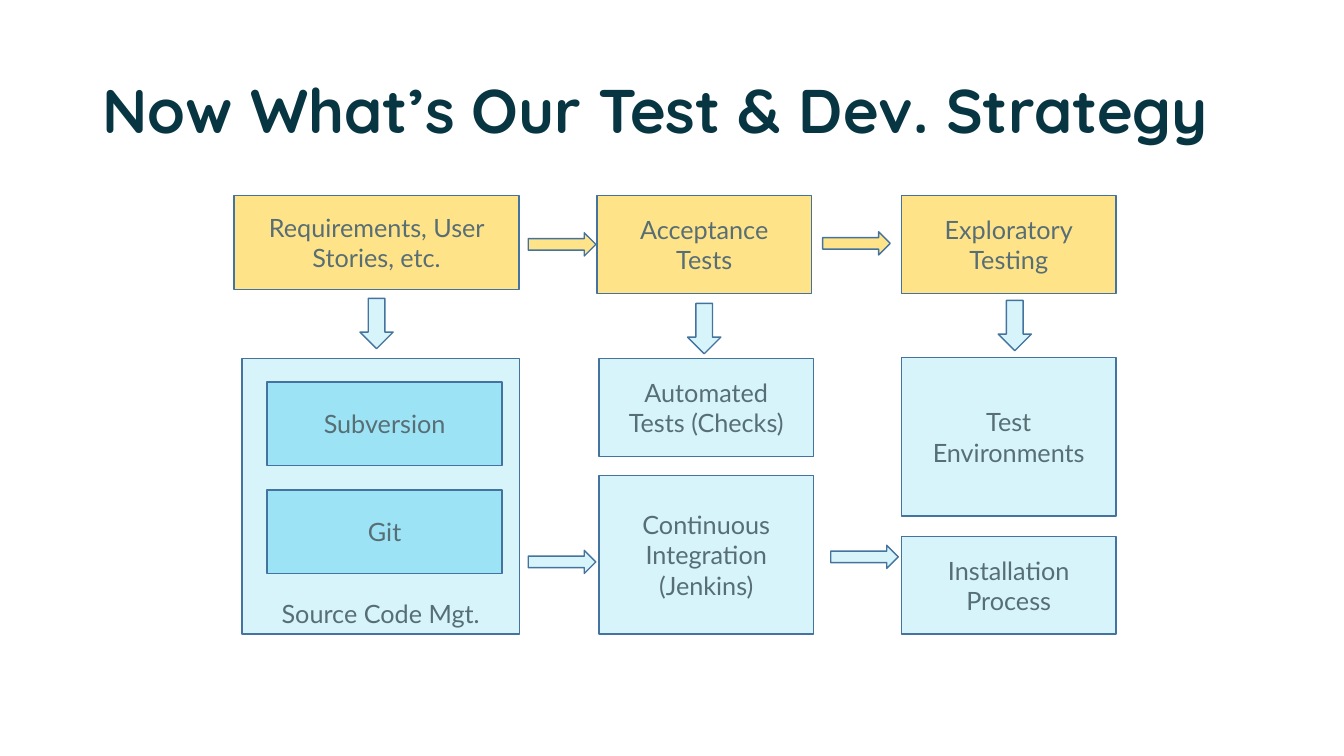
import pptx
import pptx.util
import pptx.dml.color
import pptx.enum.shapes
import pptx.enum.text

Inches = pptx.util.Inches
Pt = pptx.util.Pt
Shape = pptx.enum.shapes.MSO_SHAPE
Anchor = pptx.enum.text.MSO_ANCHOR
Align = pptx.enum.text.PP_ALIGN

COLORS = {
    "title": "073642",
    "text": "586E75",
    "line": "43739E",
    "yellow": "FFE389",
    "pale": "D7F4FB",
    "blue": "9CE3F5",
}


def color(name):
    return pptx.dml.color.RGBColor.from_string(COLORS[name])


class Board:
    """Holds the style and the current slide."""

    head = "Quicksand"
    body = "Lato"

    def __init__(self, slide):
        self.shapes = slide.shapes

    def label(self, shape, text, font, size, ink, anchor, align, bold=False):
        frame = shape.text_frame
        frame.word_wrap = True
        frame.vertical_anchor = anchor
        frame.text = text
        for para in frame.paragraphs:
            para.alignment = align
            for run in para.runs:
                run.font.name = font
                run.font.size = Pt(size)
                run.font.bold = bold
                run.font.color.rgb = color(ink)

    def title(self, text, left, top, width, height):
        box = self.shapes.add_textbox(*map(Inches, (left, top, width, height)))
        self.label(box, text, self.head, 44, "title", Anchor.MIDDLE, Align.LEFT, True)
        box.text_frame.paragraphs[0].line_spacing = 0.9

    def shape(self, kind, fill, left, top, width, height):
        item = self.shapes.add_shape(kind, *map(Inches, (left, top, width, height)))
        item.shadow.inherit = False
        item.fill.solid()
        item.fill.fore_color.rgb = color(fill)
        item.line.color.rgb = color("line")
        item.line.width = Pt(1)
        return item

    def box(self, text, fill, left, top, width, height, anchor=Anchor.MIDDLE):
        item = self.shape(Shape.RECTANGLE, fill, left, top, width, height)
        self.label(item, text, self.body, 18, "text", anchor, Align.CENTER)

    def right(self, fill, left, top):
        self.shape(Shape.RIGHT_ARROW, fill, left, top, 0.67, 0.23)

    def down(self, left, top):
        self.shape(Shape.DOWN_ARROW, "pale", left, top, 0.33, 0.5)


def main():
    deck = pptx.Presentation()
    deck.slide_width = Inches(13.33)
    deck.slide_height = Inches(7.5)
    board = Board(deck.slides.add_slide(deck.slide_layouts[6]))

    board.title("Now What’s Our Test & Dev. Strategy", 0.92, 0.4, 11.5, 1.45)

    # Top row: the testing activities
    wide, short, tall = 2.13, 0.97, 1.57
    board.box("Requirements, User Stories, etc.", "yellow", 2.32, 1.94, 2.83, 0.93)
    board.box("Acceptance\nTests", "yellow", 5.92, 1.94, wide, short)
    board.box("Exploratory\nTesting", "yellow", 8.94, 1.94, wide, short)

    # Source code management with its two tools
    board.box("Source Code Mgt.", "pale", 2.4, 3.56, 2.75, 2.73, Anchor.BOTTOM)
    for row, tool in enumerate(("Subversion", "Git")):
        board.box(tool, "blue", 2.65, 3.79 + row * 1.07, 2.33, 0.83)

    # Checks and integration
    board.box("Automated\nTests (Checks)", "pale", 5.94, 3.56, wide, short)
    board.box("Continuous Integration\n(Jenkins)", "pale", 5.94, 4.72, wide, tall)

    # Environments and installation
    board.box("Test Environments", "pale", 8.94, 3.55, wide, tall)
    board.box("Installation\nProcess", "pale", 8.94, 5.32, wide, short)

    # Arrows across and down
    for fill, left, top in (
        ("yellow", 5.24, 2.31),
        ("yellow", 8.16, 2.3),
        ("pale", 5.24, 5.46),
        ("pale", 8.24, 5.41),
    ):
        board.right(fill, left, top)
    for left, top in ((3.57, 2.96), (6.82, 3.01), (9.9, 2.98)):
        board.down(left, top)

    deck.save("out.pptx")


if __name__ == "__main__":
    main()
